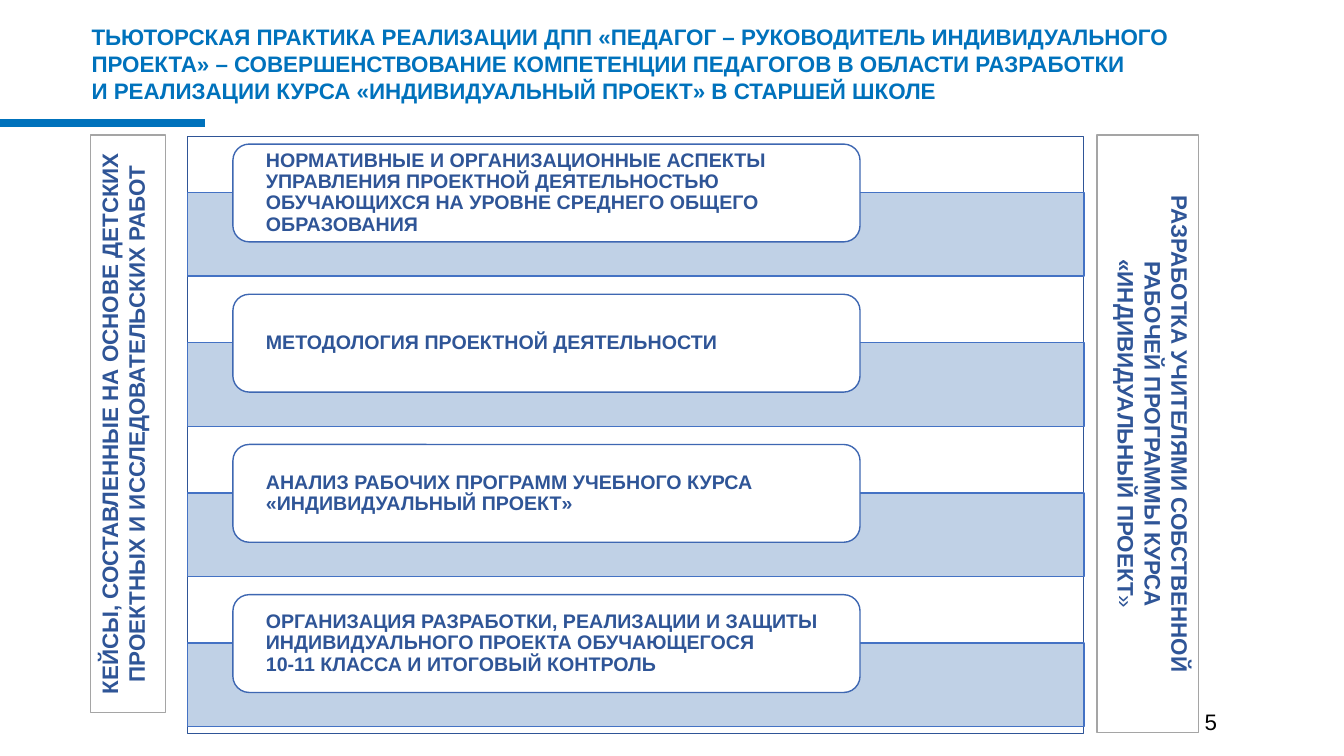
"""Builds the slide on the tutor practice behind the individual project course."""
from lxml import etree
from pptx import Presentation
from pptx.dml.color import RGBColor
from pptx.enum.shapes import MSO_CONNECTOR as Connector, MSO_SHAPE as Shape
from pptx.enum.text import MSO_ANCHOR as Anchor, PP_ALIGN as Align
from pptx.oxml.ns import qn
from pptx.util import Inches, Pt

BLUE, NAVY = "0072BC", "2F5597"


def add_box(kind, place, fill, line, width=1):
    box = slide.shapes.add_shape(kind, *map(Inches, place))
    box.shadow.inherit = False
    if fill:
        box.fill.solid()
        box.fill.fore_color.rgb = RGBColor.from_string(fill)
    else:
        box.fill.background()
    box.line.color.rgb = RGBColor.from_string(line)
    box.line.width = Pt(width)
    return box


def write(box, text, size, color, bold=True, align=Align.LEFT, anchor=Anchor.TOP):
    frame = box.text_frame
    frame.word_wrap = True
    frame.vertical_anchor = anchor
    frame.text = text
    paragraph = frame.paragraphs[0]
    paragraph.alignment = align
    for run in paragraph.runs:
        run.font.name = "Arial"
        run.font.size = Pt(size)
        run.font.bold = bold
        run.font.color.rgb = RGBColor.from_string(color)
    return paragraph


deck = Presentation()
deck.slide_width, deck.slide_height = Inches(13.33), Inches(7.5)
slide = deck.slides.add_slide(deck.slide_layouts[6])

page_number = slide.shapes.add_textbox(Inches(11.61), Inches(6.95), Inches(0.8), Inches(0.41))
write(page_number, "5", 16, "000000", bold=False, align=Align.CENTER, anchor=Anchor.MIDDLE)

accent = slide.shapes.add_connector(
    Connector.STRAIGHT, Inches(0), Inches(1.22), Inches(2.03), Inches(1.22))
accent.line.color.rgb = RGBColor.from_string(BLUE)
accent.line.width = Pt(6)
etree.SubElement(accent._element.spPr, qn("a:effectLst"))

add_box(Shape.RECTANGLE, (1.86, 1.35, 8.89, 5.93), None, NAVY, 0.75)

modules = [
    "НОРМАТИВНЫЕ И ОРГАНИЗАЦИОННЫЕ АСПЕКТЫ УПРАВЛЕНИЯ ПРОЕКТНОЙ ДЕЯТЕЛЬНОСТЬЮ "
    "ОБУЧАЮЩИХСЯ НА УРОВНЕ СРЕДНЕГО ОБЩЕГО ОБРАЗОВАНИЯ",
    "МЕТОДОЛОГИЯ ПРОЕКТНОЙ ДЕЯТЕЛЬНОСТИ",
    "АНАЛИЗ РАБОЧИХ ПРОГРАММ УЧЕБНОГО КУРСА «ИНДИВИДУАЛЬНЫЙ ПРОЕКТ»",
    "ОРГАНИЗАЦИЯ РАЗРАБОТКИ, РЕАЛИЗАЦИИ И ЗАЩИТЫ ИНДИВИДУАЛЬНОГО ПРОЕКТА "
    "ОБУЧАЮЩЕГОСЯ\v10-11 КЛАССА И ИТОГОВЫЙ КОНТРОЛЬ",
]
for index, module in enumerate(modules):
    offset = index * 1.49
    band = add_box(Shape.RECTANGLE, (1.86, 1.91 + offset, 8.89, 0.83), "BACDE4", "4472C4")
    band_color = band._element.spPr.find(qn("a:solidFill"))[0]
    etree.SubElement(band_color, qn("a:alpha"), val="90000")
    card = add_box(Shape.ROUNDED_RECTANGLE, (2.31, 1.43 + offset, 6.22, 0.97), "FFFFFF", "3E67B2")
    card.text_frame.margin_left = card.text_frame.margin_right = Inches(0.28)
    write(card, module, 14, NAVY, anchor=Anchor.MIDDLE).line_spacing = 0.9

side_panels = [
    ((0.9, 1.34, 0.74, 5.73), "vert270",
     "КЕЙСЫ, СОСТАВЛЕННЫЕ НА ОСНОВЕ ДЕТСКИХ ПРОЕКТНЫХ И ИССЛЕДОВАТЕЛЬСКИХ РАБОТ"),
    ((10.88, 1.34, 1.01, 5.93), "vert",
     "РАЗРАБОТКА УЧИТЕЛЯМИ СОБСТВЕННОЙ РАБОЧЕЙ ПРОГРАММЫ КУРСА «ИНДИВИДУАЛЬНЫЙ ПРОЕКТ"),
]
for place, direction, text in side_panels:
    panel = add_box(Shape.RECTANGLE, place, "FFFFFF", "A5A5A5")
    panel.text_frame._txBody.bodyPr.set("vert", direction)
    panel_text = write(panel, text, 16, NAVY, align=Align.CENTER)

closing_quote = panel_text.add_run()
closing_quote.text = "»"
closing_quote.font.name = "Arial"
closing_quote.font.size = Pt(16)
closing_quote.font.bold = False
closing_quote.font.color.rgb = RGBColor.from_string(NAVY)

title = slide.shapes.add_textbox(Inches(0.81), Inches(0.18), Inches(11.47), Inches(1.18))
write(title, "ТЬЮТОРСКАЯ ПРАКТИКА РЕАЛИЗАЦИИ ДПП «ПЕДАГОГ – РУКОВОДИТЕЛЬ ИНДИВИДУАЛЬНОГО "
      "ПРОЕКТА» – СОВЕРШЕНСТВОВАНИЕ КОМПЕТЕНЦИИ ПЕДАГОГОВ В ОБЛАСТИ РАЗРАБОТКИ\v"
      "И РЕАЛИЗАЦИИ КУРСА «ИНДИВИДУАЛЬНЫЙ ПРОЕКТ» В СТАРШЕЙ ШКОЛЕ", 16, BLUE)

deck.save("out.pptx")
